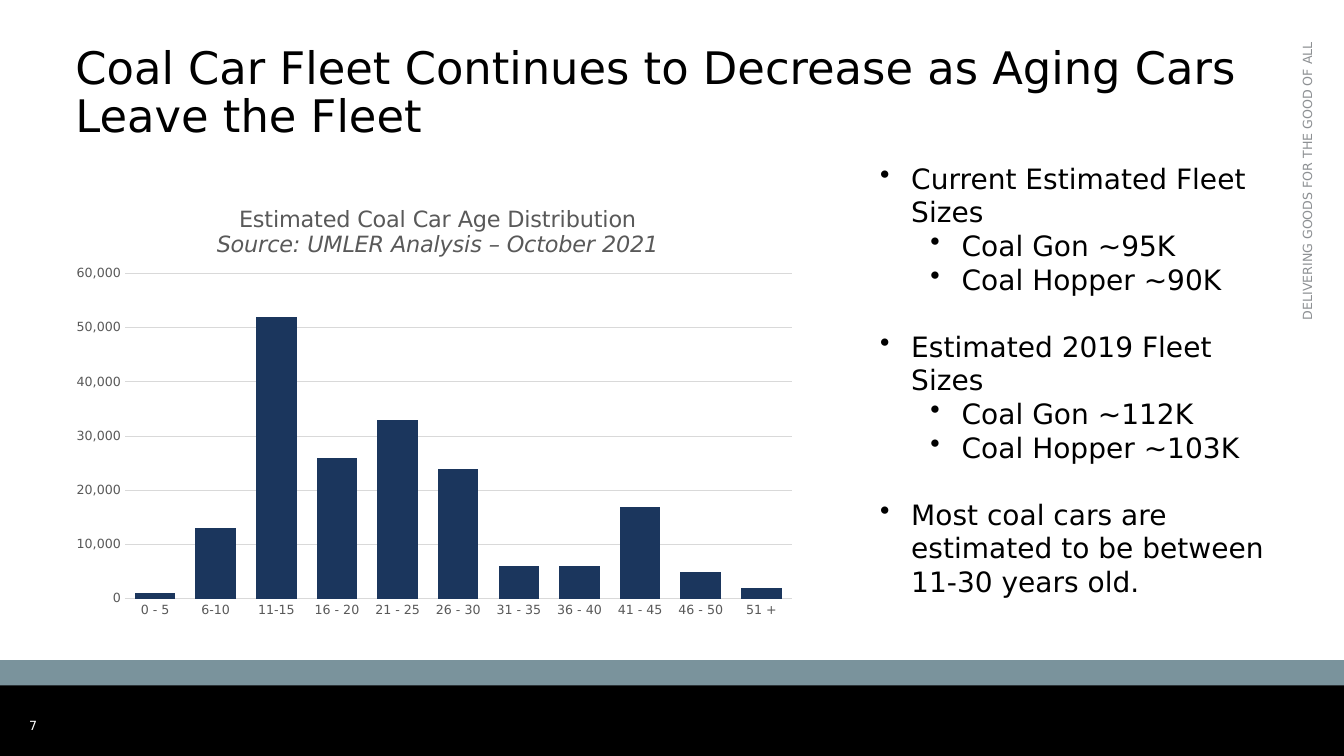
import pptx
import pptx.chart.data
import pptx.dml.color
import pptx.enum.chart
import pptx.enum.shapes
import pptx.enum.text
import pptx.oxml
import pptx.oxml.ns
import pptx.util
from pptx.util import Inches

FONT = "DejaVu Sans"
ALIGN = pptx.enum.text.PP_ALIGN
ANCHOR = pptx.enum.text.MSO_ANCHOR

CAR_AGES = {
    "0 - 5": 1000, "6-10": 13000, "11-15": 52000, "16 - 20": 26000,
    "21 - 25": 33000, "26 - 30": 24000, "31 - 35": 6000, "36 - 40": 6000,
    "41 - 45": 17000, "46 - 50": 5000, "51 +": 2000,
}
FLEET_NOTES = [
    ("Current Estimated Fleet Sizes", ["Coal Gon ~95K", "Coal Hopper ~90K"]),
    ("Estimated 2019 Fleet Sizes", ["Coal Gon ~112K", "Coal Hopper ~103K"]),
    ("Most coal cars are estimated to be between 11-30 years old.", []),
]


def color(hex_string):
    return pptx.dml.color.RGBColor.from_string(hex_string)


def set_attributes(target, values):
    for name, value in values.items():
        setattr(target, name, value)


def format_font(font, size, hex_string, **extra):
    set_attributes(font, {"name": FONT, "size": pptx.util.Pt(size), **extra})
    font.color.rgb = color(hex_string)


def add_band(slide, top, height, fill):
    shape = slide.shapes.add_shape(
        pptx.enum.shapes.MSO_SHAPE.RECTANGLE,
        0, Inches(top), Inches(13.33), Inches(height))
    shape.shadow.inherit = False
    shape.fill.solid()
    shape.fill.fore_color.rgb = color(fill)
    shape.line.fill.background()


def add_text_frame(slide, left, top, width, height, **frame_values):
    box = slide.shapes.add_textbox(*map(Inches, (left, top, width, height)))
    set_attributes(box.text_frame, {"word_wrap": True, **frame_values})
    return box.text_frame


def add_label(slide, bounds, text, size, hex_string, paragraph_values, **frame_values):
    frame = add_text_frame(slide, *bounds, **frame_values)
    paragraph = frame.paragraphs[0]
    paragraph.text = text
    set_attributes(paragraph, paragraph_values)
    format_font(paragraph.font, size, hex_string)
    return frame


def add_bullet(paragraph, text, level):
    paragraph.text = text
    paragraph.level = level
    properties = paragraph._p.get_or_add_pPr()
    properties.set("marL", str(Inches(0.31 + 0.5 * level)))
    properties.set("indent", str(Inches(-0.31)))
    bullet = pptx.oxml.parse_xml(
        f'<a:buChar {pptx.oxml.ns.nsdecls("a")} char="•"/>')
    properties.append(bullet)
    format_font(paragraph.font, 20, "000000")


def add_fleet_notes(slide):
    frame = add_text_frame(slide, 8.63, 1.55, 4.14, 4.48)
    for index, (heading, details) in enumerate(FLEET_NOTES):
        paragraph = frame.add_paragraph() if index else frame.paragraphs[0]
        add_bullet(paragraph, heading, 0)
        if index:
            paragraph.space_before = pptx.util.Pt(24)
        for detail in details:
            add_bullet(frame.add_paragraph(), detail, 1)


def set_layout(element, position, target="", **fractions):
    """Place a chart part by fractions of the chart's width and height."""
    for old_layout in element.findall(pptx.oxml.ns.qn("c:layout")):
        element.remove(old_layout)
    modes = "".join(f'<c:{axis}Mode val="edge"/>' for axis in "xy")
    sizes = "".join(f'<c:{name} val="{value}"/>' for name, value in fractions.items())
    element.insert(position, pptx.oxml.parse_xml(
        f'<c:layout {pptx.oxml.ns.nsdecls("c")}><c:manualLayout>'
        f'{target}{modes}{sizes}</c:manualLayout></c:layout>'))


def format_axis(axis):
    no_tick = pptx.enum.chart.XL_TICK_MARK.NONE
    set_attributes(axis, {"major_tick_mark": no_tick, "minor_tick_mark": no_tick})
    format_font(axis.tick_labels.font, 9, "595959")


def format_line(line):
    line.color.rgb = color("D9D9D9")
    line.width = pptx.util.Pt(0.75)


def add_chart_title(chart):
    chart.has_title = True
    frame = chart.chart_title.text_frame
    heading, source = frame.paragraphs[0], frame.add_paragraph()
    for paragraph, text, italic in (
            (heading, "Estimated Coal Car Age Distribution", False),
            (source, "Source: UMLER Analysis – October 2021", True)):
        run = paragraph.add_run()
        run.text = text
        format_font(run.font, 16, "595959", bold=False, italic=italic)
    chart.chart_title.include_in_layout = False
    set_layout(chart.chart_title._element, 1, x=0.2, y=0.04)


def add_age_chart(slide):
    data = pptx.chart.data.CategoryChartData(number_format="#,##0")
    data.categories = list(CAR_AGES)
    data.add_series("Series 1", list(CAR_AGES.values()))
    chart = slide.shapes.add_chart(
        pptx.enum.chart.XL_CHART_TYPE.COLUMN_CLUSTERED,
        Inches(0.65), Inches(1.83), Inches(7.35), Inches(4.42), data).chart
    chart.has_legend = False
    format_font(chart.font, 10, "000000")
    add_chart_title(chart)

    plot = chart.plots[0]
    set_attributes(plot, {"gap_width": 50, "overlap": -27, "vary_by_categories": False})
    bar_fill = plot.series[0].format.fill
    bar_fill.solid()
    bar_fill.fore_color.rgb = color("1B365D")

    format_axis(chart.category_axis)
    format_line(chart.category_axis.format.line)
    value_axis = chart.value_axis
    format_axis(value_axis)
    set_attributes(value_axis, {
        "minimum_scale": 0, "maximum_scale": 60000, "major_unit": 10000})
    set_attributes(value_axis.tick_labels, {
        "number_format": "#,##0", "number_format_is_linked": False})
    value_axis.format.line.fill.background()
    format_line(value_axis.major_gridlines.format.line)
    plot_area = chart._chartSpace.chart.plotArea
    set_layout(plot_area, 0, '<c:layoutTarget val="inner"/>',
               x=0.08, y=0.2, w=0.9, h=0.73)


def main():
    presentation = pptx.Presentation()
    set_attributes(presentation, {
        "slide_width": Inches(13.33), "slide_height": Inches(7.5)})
    slide = presentation.slides.add_slide(presentation.slide_layouts[6])

    motto = add_label(slide, (12.84, 0.32, 0.35, 3.31),
                      "DELIVERING GOODS FOR THE GOOD OF ALL", 9, "8D9093",
                      {"alignment": ALIGN.RIGHT})
    motto._txBody.bodyPr.set("vert", "vert270")
    add_band(slide, 6.78, 0.72, "000000")
    add_band(slide, 6.55, 0.25, "7A939C")
    add_label(slide, (0.19, 6.93, 0.58, 0.54), "7", 9, "FFFFFF", {},
              vertical_anchor=ANCHOR.MIDDLE)
    add_label(slide, (0.65, 0.4, 11.92, 1.02),
              "Coal Car Fleet Continues to Decrease as Aging Cars Leave the Fleet",
              32, "000000", {"line_spacing": 0.9})
    add_age_chart(slide)
    add_fleet_notes(slide)
    presentation.save("out.pptx")


if __name__ == "__main__":
    main()
